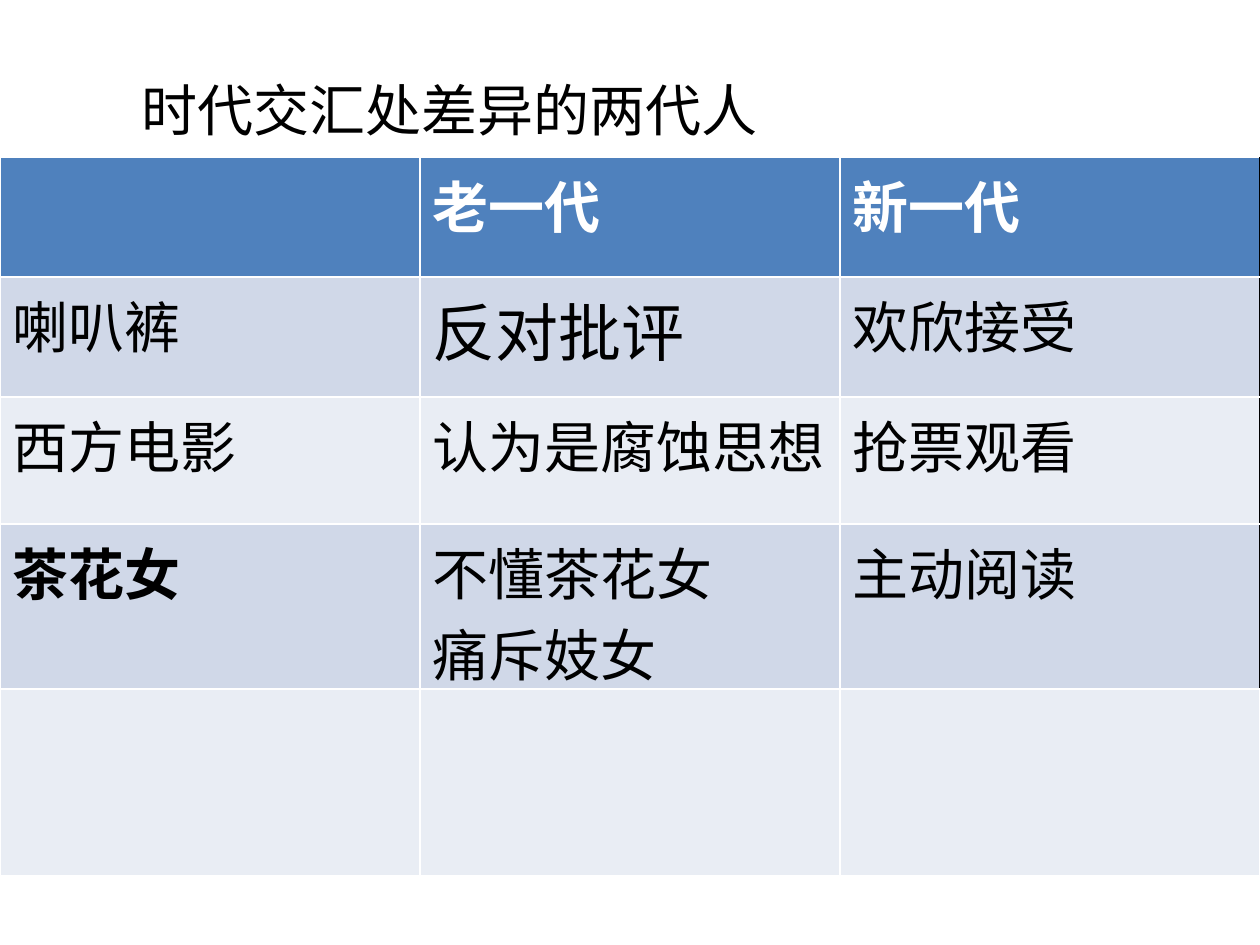
from lxml import etree
from pptx import Presentation
from pptx.dml.color import RGBColor
from pptx.enum import text as t
from pptx.oxml import ns
from pptx.util import Inches, Pt

COLORS = {"header": "4F81BD", "odd": "D0D8E8", "even": "E9EDF4",
          "ink": "000000", "light": "FFFFFF"}
LATIN, CJK = "Calibri", "Noto Sans CJK JP"
ROW_HEIGHTS = [0.95, 0.95, 1.01, 1.31, 1.48]
ROWS = [
    ["", "老一代", "新一代"],
    ["喇叭裤", "反对批评", "欢欣接受"],
    ["西方电影", "认为是腐蚀思想", "抢票观看"],
    ["茶花女", "不懂茶花女\n痛斥妓女", "主动阅读"],
    ["", "", ""],
]


def write(frame, content, size=32, font=LATIN, color="ink", bold=False):
    """Fill a text frame, one paragraph per line, in one format."""
    frame.text = content
    for paragraph in frame.paragraphs:
        paragraph.alignment = t.PP_ALIGN.LEFT
        for run in paragraph.runs:
            run.font.size = Pt(size)
            run.font.name = font
            run.font.bold = bold
            run.font.color.rgb = RGBColor.from_string(COLORS[color])


def add_heading(slide):
    """Place and format the slide title."""
    heading = slide.shapes.title
    heading.left, heading.top = Inches(1.02), Inches(0.55)
    heading.width, heading.height = Inches(5.14), Inches(0.64)
    frame = heading.text_frame
    write(frame, "时代交汇处差异的两代人")
    frame.vertical_anchor = t.MSO_ANCHOR.TOP
    frame.word_wrap = False
    frame.auto_size = t.MSO_AUTO_SIZE.SHAPE_TO_FIT_TEXT


def fill_cell(cell, color):
    """Give a table cell a solid fill."""
    cell.fill.solid()
    cell.fill.fore_color.rgb = RGBColor.from_string(COLORS[color])


def edge_right(cell, color):
    """Draw a one-point line on the right side of a cell."""
    edge = etree.Element(ns.qn("a:lnR"), w=str(Pt(1)))
    solid = etree.SubElement(edge, ns.qn("a:solidFill"))
    etree.SubElement(solid, ns.qn("a:srgbClr"), val=COLORS[color])
    cell._tc.get_or_add_tcPr().insert(0, edge)


def add_comparison(slide):
    """Add the table that compares the two generations."""
    columns = len(ROWS[0])
    comparison = slide.shapes.add_table(
        len(ROWS), columns, Inches(0), Inches(1.25),
        Inches(10), Inches(sum(ROW_HEIGHTS))).table
    for r, (row, height) in enumerate(zip(ROWS, ROW_HEIGHTS)):
        comparison.rows[r].height = Inches(height)
        band = "header" if r == 0 else "odd" if r % 2 else "even"
        for c, content in enumerate(row):
            cell = comparison.cell(r, c)
            fill_cell(cell, band)
            if content:
                write(cell.text_frame, content,
                      size=36 if content == "反对批评" else 32,
                      font=CJK if r == 0 or c == 0 else LATIN,
                      color="light" if r == 0 else "ink",
                      bold=r == 0 or content == "茶花女")
            if c == columns - 1 and content:
                edge_right(cell, "ink")


def main():
    """Build and save the slide."""
    deck = Presentation()
    deck.slide_width, deck.slide_height = Inches(10), Inches(7.5)
    slide = deck.slides.add_slide(deck.slide_layouts[5])
    add_heading(slide)
    add_comparison(slide)
    deck.save("out.pptx")


if __name__ == "__main__":
    main()
